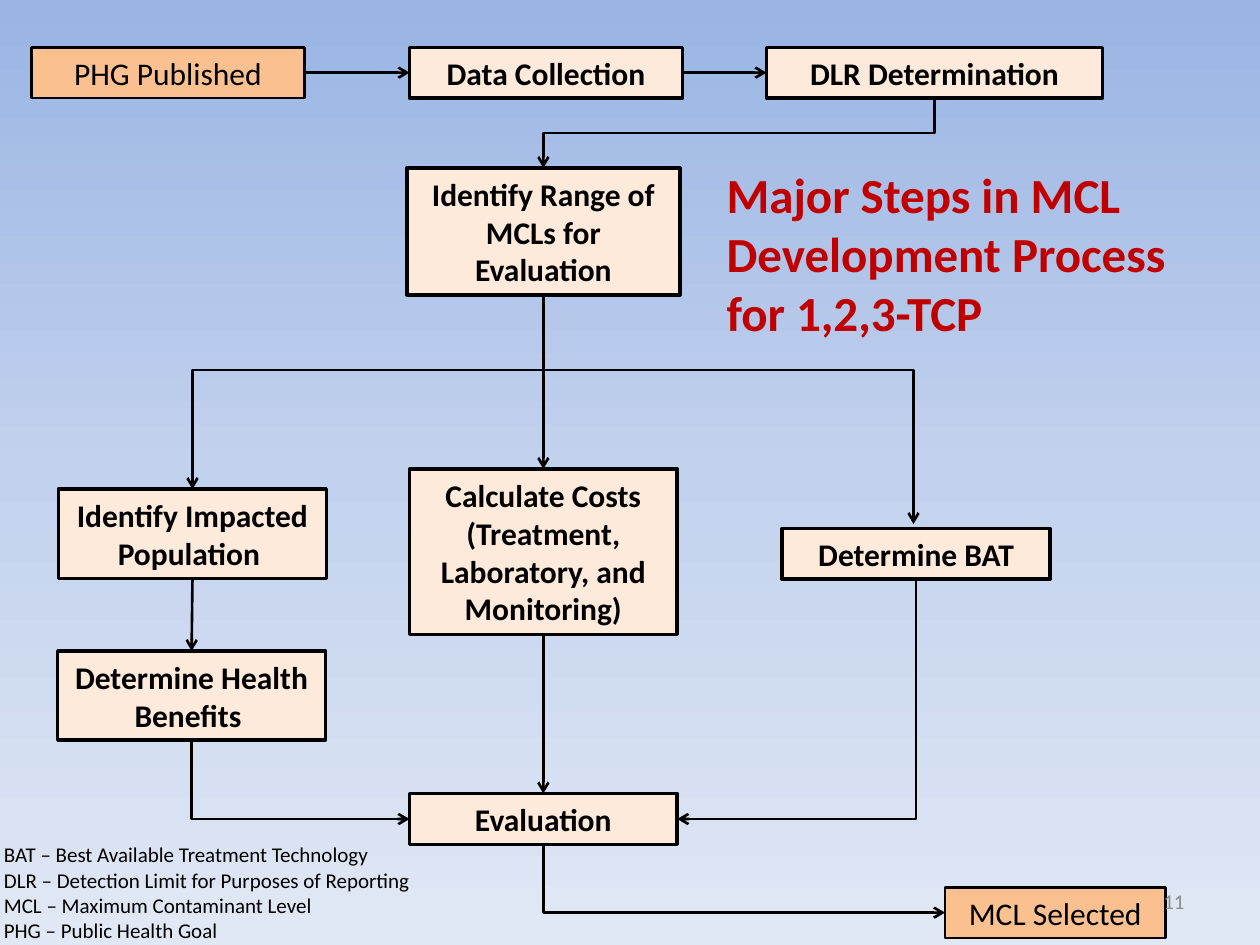
from copy import deepcopy

from lxml import etree
from pptx import Presentation
from pptx.dml.color import RGBColor
from pptx.enum.shapes import MSO_CONNECTOR, MSO_SHAPE
from pptx.enum.text import MSO_ANCHOR, MSO_AUTO_SIZE, PP_ALIGN
from pptx.oxml.ns import qn
from pptx.util import Pt

RECT = MSO_SHAPE.RECTANGLE
STRAIGHT, ELBOW = MSO_CONNECTOR.STRAIGHT, MSO_CONNECTOR.ELBOW
LEFT, CENTER, RIGHT = PP_ALIGN.LEFT, PP_ALIGN.CENTER, PP_ALIGN.RIGHT
TOP, MIDDLE = MSO_ANCHOR.TOP, MSO_ANCHOR.MIDDLE
NO_AUTOFIT = MSO_AUTO_SIZE.NONE
SIDE_TOP, SIDE_LEFT, SIDE_BOTTOM, SIDE_RIGHT = range(4)

COLORS = {
    "black": "000000",
    "milestone": "FAC090",
    "step": "FDEADA",
    "title": "C00000",
    "number": "8C8C8C",
}
BACKGROUND = [(0, "9AB5E4"), (0.5, "C2D1ED"), (1, "E1E8F5")]

STEPS = {
    "data": ("Data Collection", 234, 27, 156, 29),
    "bat": ("Determine BAT", 447, 302, 153, 29),
    "dlr": ("DLR Determination", 438, 27, 192, 29),
    "costs": ("Calculate Costs (Treatment, Laboratory, and Monitoring)", 234, 268, 153, 94.5),
    "benefits": ("Determine Health Benefits ", 33, 372, 153, 51),
    "evaluation": ("Evaluation", 234, 453.5, 153, 29),
    "population": ("Identify Impacted Population ", 33.5, 279.5, 153, 51),
    "range": ("Identify Range of MCLs for Evaluation", 232.5, 96, 156, 72.5),
}
MILESTONES = {
    "phg": ("PHG Published", 18, 27, 156, 29),
    "mcl": ("MCL Selected", 540, 507, 126, 29),
}
ARROWS = [
    ("phg", SIDE_RIGHT, "data", SIDE_LEFT),
    ("data", SIDE_RIGHT, "dlr", SIDE_LEFT),
    ("range", SIDE_BOTTOM, "costs", SIDE_TOP),
    ("costs", SIDE_BOTTOM, "evaluation", SIDE_TOP),
    ("population", SIDE_BOTTOM, "benefits", SIDE_TOP),
]
ACROSS_THEN_DOWN = [
    ((310.5, 211.5), (110, 279.5)),
    ((310.5, 211.5), (522, 299.5)),
]
DOWN_THEN_ACROSS = [
    ((109.5, 423), (234, 468)),
    ((523.5, 331), (387, 468)),
    ((310.5, 482.5), (540, 521.5)),
]
ABBREVIATIONS = [
    "BAT – Best Available Treatment Technology",
    "DLR – Detection Limit for Purposes of Reporting",
    "MCL – Maximum Contaminant Level",
    "PHG – Public Health Goal",
]


def rgb(value):
    return RGBColor.from_string(value)


def write(sp, *lines, size=18, color="black", bold=False, align=LEFT, anchor=TOP):
    tf = sp.text_frame
    tf.word_wrap = True
    tf.auto_size = NO_AUTOFIT
    tf.vertical_anchor = anchor
    for i, line in enumerate(lines):
        p = tf.paragraphs[0] if i == 0 else tf.add_paragraph()
        p.alignment = align
        p.space_before = Pt(0)
        r = p.add_run()
        r.text = line
        r.font.name = "Calibri"
        r.font.size = Pt(size)
        r.font.bold = bold
        r.font.color.rgb = rgb(COLORS[color])


def place(sp, left, top, width, height):
    sp.left, sp.top, sp.width, sp.height = map(Pt, (left, top, width, height))


def paint_background(s):
    fill = s.background.fill
    fill.gradient()
    fill.gradient_angle = 270
    stops = s.element.xpath(".//a:gsLst")[0]
    stops.append(deepcopy(stops[0]))
    for stop, (position, value) in zip(fill.gradient_stops, BACKGROUND):
        stop.position = position
        stop.color.rgb = rgb(value)


def add_box(s, text, *area, fill="step", bold=True, line=2):
    sp = s.shapes.add_shape(RECT, *map(Pt, area))
    sp.shadow.inherit = False
    sp.fill.solid()
    sp.fill.fore_color.rgb = rgb(COLORS[fill])
    sp.line.color.rgb = rgb(COLORS["black"])
    sp.line.width = Pt(line)
    write(sp, text, bold=bold, align=CENTER, anchor=MIDDLE)
    return sp


def add_arrow(s, kind, *ends):
    c = s.shapes.add_connector(kind, *map(Pt, ends))
    c.line.color.rgb = rgb(COLORS["black"])
    c.line.width = Pt(1.5)
    sp_pr = c.element.spPr
    etree.SubElement(sp_pr.find(qn("a:ln")), qn("a:tailEnd"), type="arrow")
    etree.SubElement(sp_pr, qn("a:effectLst"))
    return c


def join(s, start, start_side, end, end_side):
    c = add_arrow(s, STRAIGHT, 0, 0, 0, 0)
    c.begin_connect(start, start_side)
    c.end_connect(end, end_side)


def add_elbow(s, start, end, down_first=True, preset="bentConnector2"):
    (x1, y1), (x2, y2) = start, end
    rightward = x2 > x1
    if down_first:
        mid_x, mid_y = (x1 + x2) / 2, (y1 + y2) / 2
        half_w, half_h = (y2 - y1) / 2, abs(x2 - x1) / 2
        turn = -1 if rightward else 1
        x1, x2 = mid_x - turn * half_w, mid_x + turn * half_w
        y1, y2 = mid_y - half_h, mid_y + half_h
    c = add_arrow(s, ELBOW, x1, y1, x2, y2)
    sp_pr = c.element.spPr
    sp_pr.find(qn("a:prstGeom")).set("prst", preset)
    if down_first:
        degrees = 270 if rightward else 90
        sp_pr.find(qn("a:xfrm")).set("rot", str(degrees * 60000))


def add_abbreviations(sp):
    place(sp, -5, 477.5, 260, 82)
    write(sp, *ABBREVIATIONS, size=12)
    for p in sp.text_frame.paragraphs:
        p_pr = p._p.get_or_add_pPr()
        p_pr.set("marL", "0")
        p_pr.set("indent", "0")
        etree.SubElement(p_pr, qn("a:buNone"))


def main():
    prs = Presentation()
    prs.slide_width, prs.slide_height = Pt(720), Pt(540)
    s = prs.slides.add_slide(prs.slide_layouts[1])
    paint_background(s)

    boxes = {name: add_box(s, *step) for name, step in STEPS.items()}
    for name, milestone in MILESTONES.items():
        boxes[name] = add_box(s, *milestone, fill="milestone", bold=False, line=1.5)

    for start, start_side, end, end_side in ARROWS:
        join(s, boxes[start], start_side, boxes[end], end_side)
    add_elbow(s, (534, 56), (310.5, 96), preset="bentConnector3")
    for start, end in ACROSS_THEN_DOWN:
        add_elbow(s, start, end, down_first=False)
    for start, end in DOWN_THEN_ACROSS:
        add_elbow(s, start, end)

    title = s.shapes.title
    place(title, 408, 90.5, 285, 109)
    write(title, "Major Steps in MCL Development Process for 1,2,3-TCP",
          size=28, color="title", bold=True)
    add_abbreviations(s.placeholders[1])
    number = s.shapes.add_textbox(*map(Pt, (516, 500.5, 168, 29)))
    write(number, "11", size=12, color="number", align=RIGHT, anchor=MIDDLE)

    prs.save("out.pptx")


if __name__ == "__main__":
    main()
